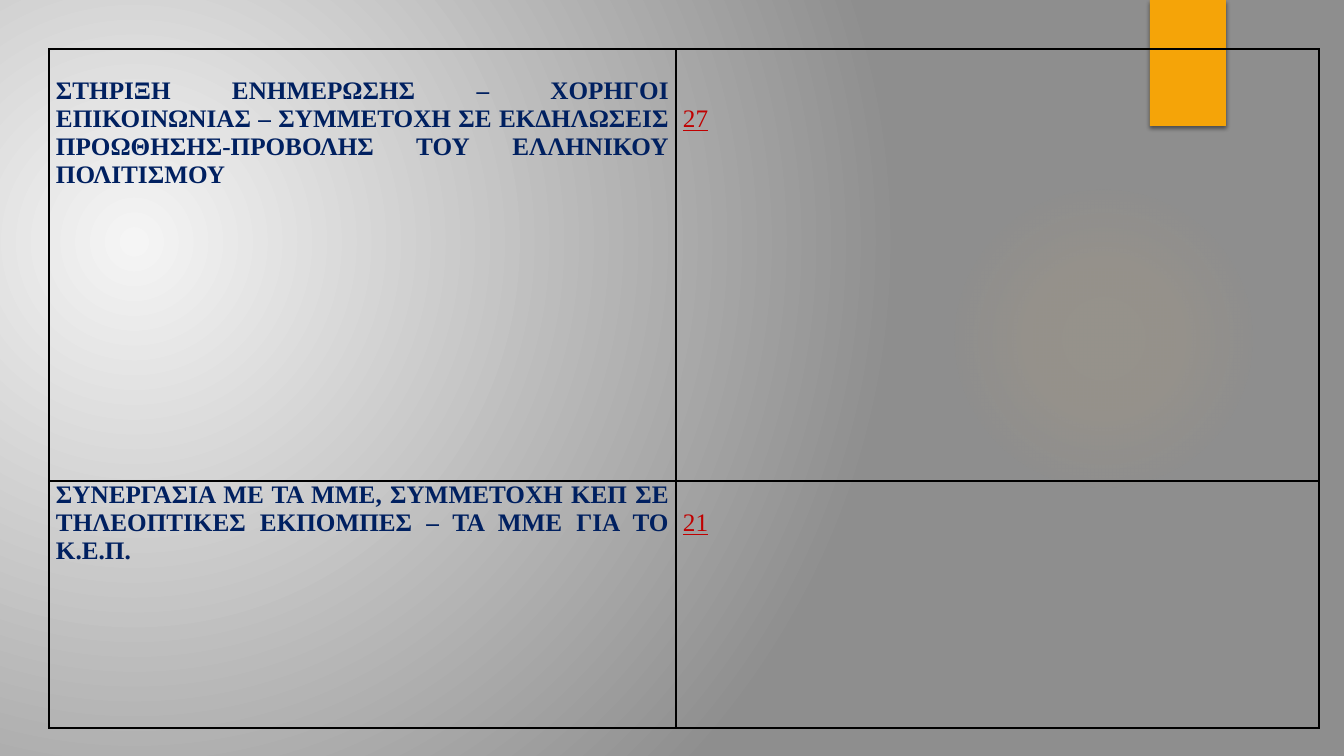
import pptx
import pptx.dml.color
import pptx.enum.shapes
import pptx.enum.text
import pptx.oxml
import pptx.oxml.ns
import pptx.util

COLORS = {
    "light": "F5F5F5",
    "grey": "8E8E8E",
    "glow": "FAC96A",
    "tab": "F5A408",
    "topic": "002060",
    "page": "C00000",
    "border": "000000",
}
TOPICS = [
    ("ΣΤΗΡΙΞΗ ΕΝΗΜΕΡΩΣΗΣ – ΧΟΡΗΓΟΙ ΕΠΙΚΟΙΝΩΝΙΑΣ – ΣΥΜΜΕΤΟΧΗ ΣΕ ΕΚΔΗΛΩΣΕΙΣ "
     "ΠΡΟΩΘΗΣΗΣ-ΠΡΟΒΟΛΗΣ ΤΟΥ ΕΛΛΗΝΙΚΟΥ ΠΟΛΙΤΙΣΜΟΥ", "27", 1),
    ("ΣΥΝΕΡΓΑΣΙΑ ΜΕ ΤΑ ΜΜΕ, ΣΥΜΜΕΤΟΧΗ ΚΕΠ ΣΕ ΤΗΛΕΟΠΤΙΚΕΣ ΕΚΠΟΜΠΕΣ – "
     "ΤΑ ΜΜΕ ΓΙΑ ΤΟ Κ.Ε.Π.", "21", 0),
]
COLUMNS = [627, 643]
ROWS = [432, 247]
TABLE_AT = (49, 49)
GLOW_AT = (949, 184, 310, 310)
TAB_AT = (1150, 0, 76, 126)
LINE = 28
INSET = 7
NS = pptx.oxml.ns.nsdecls("a")


def px(n):
    return pptx.util.Emu(round(n * 914400 / 100.8))


def rgb(name):
    return pptx.dml.color.RGBColor.from_string(COLORS[name])


def set_radial(parent, stops, center):
    stop_xml = "".join(
        f'<a:gs pos="{pos * 1000}"><a:srgbClr val="{COLORS[name]}">'
        f'<a:alpha val="{alpha * 1000}"/></a:srgbClr></a:gs>'
        for pos, name, alpha in stops)
    left, top, right, bottom = (n * 1000 for n in center)
    gradient = pptx.oxml.parse_xml(
        f'<a:gradFill {NS} rotWithShape="1"><a:gsLst>{stop_xml}</a:gsLst>'
        f'<a:path path="circle"><a:fillToRect l="{left}" t="{top}" '
        f'r="{right}" b="{bottom}"/></a:path></a:gradFill>')
    solid = parent.find(pptx.oxml.ns.qn("a:solidFill"))
    parent.replace(solid, gradient)


def add_plain(slide, kind, box, color):
    shape = slide.shapes.add_shape(kind, *map(px, box))
    shape.shadow.inherit = False
    shape.fill.solid()
    shape.fill.fore_color.rgb = rgb(color)
    shape.line.fill.background()
    return shape


def write(cell, text, color, skip=0, bold=False, underline=False):
    cell.fill.background()
    cell.margin_left = cell.margin_right = px(INSET)
    cell.margin_top = px(skip * LINE)
    cell.margin_bottom = 0
    paragraph = cell.text_frame.paragraphs[0]
    paragraph.alignment = pptx.enum.text.PP_ALIGN.JUSTIFY
    run = paragraph.add_run()
    run.text = text
    run.font.name = "Times New Roman"
    run.font.size = pptx.util.Pt(18)
    run.font.bold = bold
    run.font.underline = underline
    run.font.color.rgb = rgb(color)


def set_borders(cell):
    properties = cell._tc.get_or_add_tcPr()
    for place, side in enumerate(("lnL", "lnR", "lnT", "lnB")):
        properties.insert(place, pptx.oxml.parse_xml(
            f'<a:{side} {NS} w="12700"><a:solidFill><a:srgbClr '
            f'val="{COLORS["border"]}"/></a:solidFill></a:{side}>'))


def main():
    deck = pptx.Presentation()
    deck.slide_width, deck.slide_height = px(1344), px(756)
    slide = deck.slides.add_slide(deck.slide_layouts[6])

    slide.background.fill.solid()
    slide.background.fill.fore_color.rgb = rgb("grey")
    backdrop = slide.element.find(".//" + pptx.oxml.ns.qn("p:bgPr"))
    set_radial(backdrop, [(0, "light", 100), (100, "grey", 100)],
               (45, 65, 125, 100))

    shapes = pptx.enum.shapes.MSO_SHAPE
    glow = add_plain(slide, shapes.OVAL, GLOW_AT, "glow")
    set_radial(glow.element.spPr,
               [(0, "glow", 7), (36, "glow", 6), (69, "glow", 0)],
               (50, 50, 50, 50))

    tab = add_plain(slide, shapes.RECTANGLE, TAB_AT, "tab")
    effects = tab.element.spPr.find(pptx.oxml.ns.qn("a:effectLst"))
    effects.append(pptx.oxml.parse_xml(
        f'<a:outerShdw {NS} blurRad="38100" dist="25400" dir="5400000" '
        f'rotWithShape="0"><a:srgbClr val="{COLORS["border"]}">'
        f'<a:alpha val="45000"/></a:srgbClr></a:outerShdw>'))

    table = slide.shapes.add_table(
        len(ROWS), len(COLUMNS), *map(px, TABLE_AT),
        px(sum(COLUMNS)), px(sum(ROWS))).table
    table.first_row = table.horz_banding = False
    for column, width in zip(table.columns, COLUMNS):
        column.width = px(width)
    for row, height, (topic, page, skip) in zip(table.rows, ROWS, TOPICS):
        row.height = px(height)
        topic_cell, page_cell = row.cells
        write(topic_cell, topic, "topic", skip=skip, bold=True)
        write(page_cell, page, "page", skip=skip + 1, underline=True)
        for cell in row.cells:
            set_borders(cell)

    deck.save("out.pptx")


if __name__ == "__main__":
    main()
